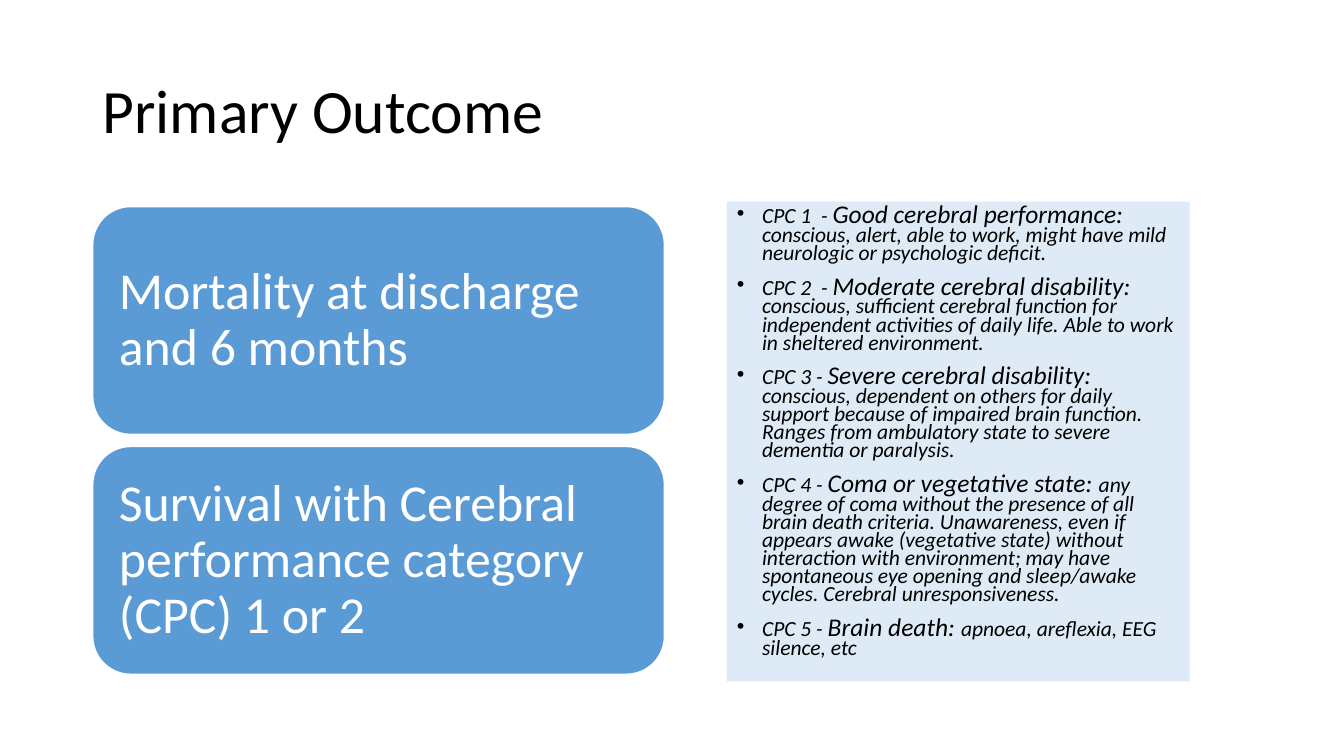
from lxml import etree
from pptx import Presentation
from pptx.dml.color import RGBColor
from pptx.enum import shapes, text
from pptx.oxml import ns
from pptx.util import Inches, Pt

FONT = "Calibri"
COLORS = {"ink": "000000", "white": "FFFFFF", "card": "5B9BD5", "panel": "DEEBF7"}

GOALS = [
    "Mortality at discharge and 6 months",
    "Survival with Cerebral performance category (CPC) 1 or 2",
]

LEVELS = [
    ("CPC 1  - ", "Good cerebral performance: ",
     "conscious, alert, able to work, might have mild neurologic or psychologic deficit."),
    ("CPC 2  - ", "Moderate cerebral disability: ",
     "conscious, sufficient cerebral function for independent activities of daily life. "
     "Able to work in sheltered environment."),
    ("CPC 3 - ", "Severe cerebral disability: ",
     "conscious, dependent on others for daily support because of impaired brain function. "
     "Ranges from ambulatory state to severe dementia or paralysis."),
    ("CPC 4 - ", "Coma or vegetative state: ",
     "any degree of coma without the presence of all brain death criteria. "
     "Unawareness, even if appears awake (vegetative state) without interaction with "
     "environment; may have spontaneous eye opening and sleep/awake cycles. "
     "Cerebral unresponsiveness."),
    ("CPC 5 - ", "Brain death: ", "apnoea, areflexia, EEG silence, etc"),
]


def color(name):
    return RGBColor.from_string(COLORS[name])


def add_run(para, words, size, tint, italic=False):
    run = para.add_run()
    run.text = words
    font = run.font
    font.name = FONT
    font.size = Pt(size)
    font.italic = italic
    font.color.rgb = color(tint)


def set_frame(shape, anchor, side, edge):
    frame = shape.text_frame
    frame.word_wrap = True
    frame.vertical_anchor = anchor
    frame.margin_left = frame.margin_right = Inches(side)
    frame.margin_top = frame.margin_bottom = Inches(edge)
    return frame


def set_para(para, spacing):
    para.alignment = text.PP_ALIGN.LEFT
    para.line_spacing = spacing


def add_box(slide, kind, place, fill):
    box = slide.shapes.add_shape(kind, *map(Inches, place))
    box.shadow.inherit = False
    box.fill.solid()
    box.fill.fore_color.rgb = color(fill)
    return box


def add_title(slide, words):
    box = slide.shapes.add_textbox(*map(Inches, (0.92, 0.4, 11.5, 1.45)))
    para = set_frame(box, text.MSO_ANCHOR.MIDDLE, 0.1, 0.05).paragraphs[0]
    set_para(para, 0.9)
    add_run(para, words, 44, "ink")


def add_card(slide, top, words):
    kind = shapes.MSO_SHAPE.ROUNDED_RECTANGLE
    card = add_box(slide, kind, (0.92, top, 5.67, 2.26), "card")
    card.line.color.rgb = color("white")
    card.line.width = Pt(1)
    para = set_frame(card, text.MSO_ANCHOR.MIDDLE, 0.15, 0.15).paragraphs[0]
    set_para(para, 0.9)
    add_run(para, words, 37, "white")


def add_bullet(para):
    props = para._p.get_or_add_pPr()
    props.set("marL", str(Inches(0.25)))
    props.set("indent", str(Inches(-0.25)))
    etree.SubElement(props, ns.qn("a:buFont"), typeface="Arial")
    etree.SubElement(props, ns.qn("a:buChar"), char="•")


def add_panel(slide, levels):
    kind = shapes.MSO_SHAPE.RECTANGLE
    panel = add_box(slide, kind, (7.21, 2, 4.59, 4.76), "panel")
    panel.line.fill.background()
    frame = set_frame(panel, text.MSO_ANCHOR.TOP, 0.1, 0.05)
    for index, level in enumerate(levels):
        para = frame.add_paragraph() if index else frame.paragraphs[0]
        set_para(para, 0.7)
        para.space_before = Pt(10)
        add_bullet(para)
        for words, size in zip(level, (15.4, 18.2, 15.4)):
            add_run(para, words, size, "ink", italic=True)


def main():
    deck = Presentation()
    deck.slide_width = Inches(13.33)
    deck.slide_height = Inches(7.5)
    slide = deck.slides.add_slide(deck.slide_layouts[6])
    add_title(slide, "Primary Outcome")
    for index, goal in enumerate(GOALS):
        add_card(slide, 2.05 + 2.38 * index, goal)
    add_panel(slide, LEVELS)
    deck.save("out.pptx")


if __name__ == "__main__":
    main()
